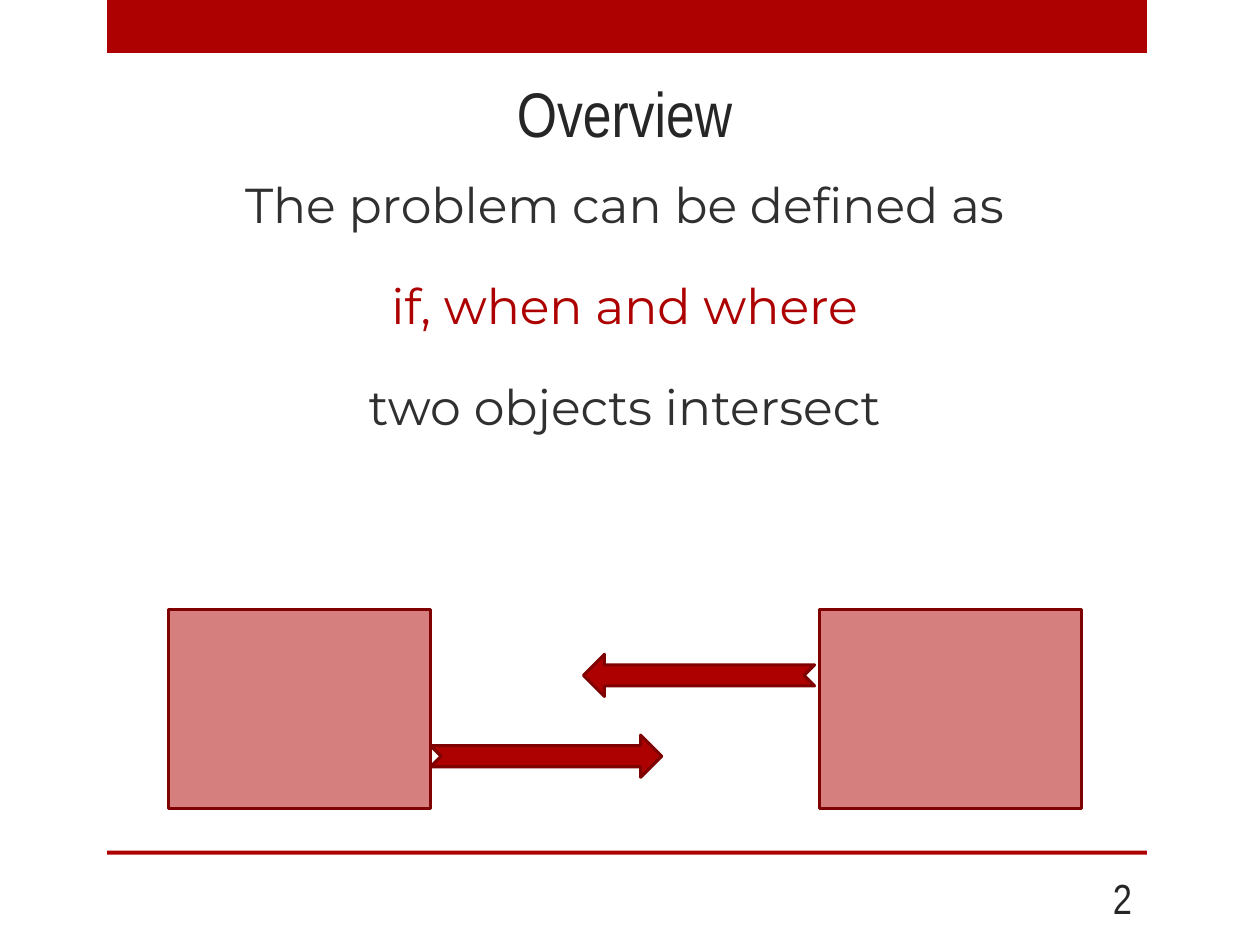
from lxml import etree
from pptx import Presentation
from pptx.dml.color import RGBColor
from pptx.enum import shapes, text
from pptx.oxml.ns import qn
from pptx.util import Cm, Pt

RED, DARK_RED, INK, GREY = "AD0101", "800101", "262626", "303030"
SHAPE = shapes.MSO_SHAPE
ALIGN = text.PP_ALIGN
ANCHOR = text.MSO_ANCHOR


def color(value):
    return RGBColor.from_string(value)


def add_block(s, kind, box, line=None, alpha=None):
    sp = s.shapes.add_shape(kind, *map(Cm, box))
    sp.shadow.inherit = False
    sp.fill.solid()
    sp.fill.fore_color.rgb = color(RED)
    if line:
        sp.line.color.rgb = color(line)
        sp.line.width = Pt(1.75)
    else:
        sp.line.fill.background()
    if alpha:
        clr = sp.fill._xPr.find(qn("a:solidFill"))[0]
        etree.SubElement(clr, qn("a:alpha"), val=str(alpha * 1000))
    return sp


def add_text(s, box, lines, font, align=ALIGN.CENTER, anchor=ANCHOR.TOP, gap=0):
    tf = s.shapes.add_textbox(*map(Cm, box)).text_frame
    tf.word_wrap = True
    tf.vertical_anchor = anchor
    for i, (words, ink) in enumerate(lines):
        p = tf.paragraphs[0] if i == 0 else tf.add_paragraph()
        p.alignment = align
        p.space_before = Pt(gap if i else 0)
        r = p.add_run()
        r.text = words
        for name, value in font.items():
            setattr(r.font, name, value)
        r.font.color.rgb = color(ink)


def add_frame(s, box):
    x, y, w, h = box
    add_block(s, SHAPE.RECTANGLE, (x, y, w, 1.07))
    add_block(s, SHAPE.RECTANGLE, (x, y + h - 0.08, w, 0.08))


def add_title(s, box):
    font = {"name": "Arial Narrow", "size": Pt(36)}
    add_text(s, box, [("Overview", INK)], font, anchor=ANCHOR.MIDDLE)


def add_body(s, box):
    lines = [
        ("The problem can be defined as", GREY),
        ("if, when and where", RED),
        ("two objects intersect", GREY),
    ]
    add_text(s, box, lines, {"name": "Montserrat", "size": Pt(28)}, gap=24)


def add_page_number(s, box):
    font = {"name": "Arial Narrow", "size": Pt(24)}
    add_text(s, box, [("2", INK)], font, ALIGN.RIGHT, ANCHOR.MIDDLE)


def add_collision(s, box):
    x, y, w, h = box
    side, arrow_w, arrow_h = 5.29, 4.66, 0.85
    for left in (x, x + w - side):
        add_block(s, SHAPE.RECTANGLE, (left, y, side, h), DARK_RED, 50)
    arrows = [
        (x + side, y + 2.54, 0),
        (x + w - side - 0.1 - arrow_w, y + 0.91, 180),
    ]
    for left, top, turn in arrows:
        arrow = add_block(s, SHAPE.NOTCHED_RIGHT_ARROW,
                          (left, top, arrow_w, arrow_h), DARK_RED)
        arrow.rotation = turn


def main():
    prs = Presentation()
    prs.slide_width, prs.slide_height = Cm(25.4), Cm(19.05)
    s = prs.slides.add_slide(prs.slide_layouts[6])
    add_frame(s, (2.16, 0, 20.96, 17.23))
    add_title(s, (2.11, 1.35, 20.96, 1.83))
    add_body(s, (2.11, 3.39, 20.96, 5.72))
    add_page_number(s, (20.96, 17.58, 2.11, 1.02))
    add_collision(s, (3.39, 12.28, 18.42, 4.02))
    prs.save("out.pptx")


if __name__ == "__main__":
    main()
